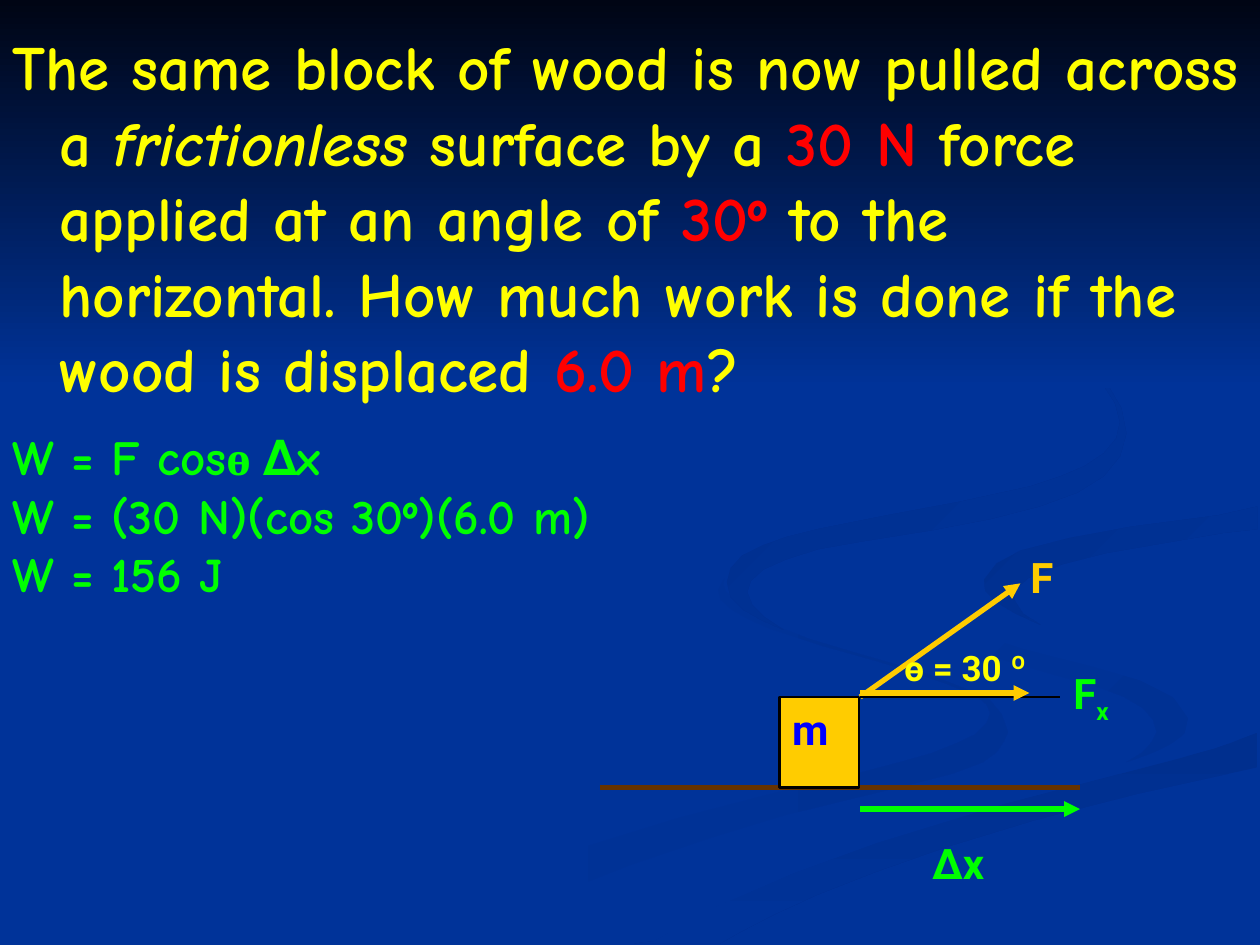
from dataclasses import dataclass

from lxml.etree import SubElement
from pptx import Presentation
from pptx.dml.color import RGBColor as RGB
from pptx.enum.shapes import MSO_CONNECTOR as Connector, MSO_SHAPE as Shape
from pptx.enum.text import MSO_ANCHOR as Anchor, PP_ALIGN as Align
from pptx.oxml.ns import qn
from pptx.util import Cm, Pt


@dataclass(frozen=True)
class Theme:
    back: str = "003399"
    night: str = "000514"
    shade: str = "002F8E"
    dim: str = "003193"
    yellow: str = "FFFF00"
    red: str = "FF0000"
    green: str = "00FF00"
    gold: str = "FFCC00"
    blue: str = "0000FF"
    brown: str = "663300"
    black: str = "000000"
    comic: str = "Comic Neue"
    sans: str = "Roboto"
    serif: str = "Times New Roman"
    question: int = 36
    work: int = 28
    label: int = 24
    angle: int = 20


T = Theme()
HUNDREDTH_INCH = Cm(2.54) / 100

LOWER_SWIRL = [
    (781, 553), (757, 543), (731, 533), (682, 519), (642, 507), (614, 496),
    (594, 485), (583, 477), (576, 469), (574, 464), (575, 459), (570, 468),
    (572, 476), (581, 484), (593, 491), (611, 499), (654, 513), (697, 525),
    (728, 535), (752, 543), (776, 553), (783, 559), (786, 566), (783, 574),
    (774, 583), (759, 590), (739, 598), (714, 605), (684, 613), (616, 629),
    (539, 649), (458, 674), (417, 690), (376, 707), (338, 727), (300, 749),
    (361, 749), (431, 714), (499, 687), (564, 665), (623, 647), (676, 634),
    (721, 623), (756, 614), (780, 605), (791, 597), (797, 588), (800, 581),
    (795, 567), (786, 556)]
RIGHT_SWIRL = [
    (943, 570), (939, 562), (930, 553), (905, 540), (870, 530), (830, 519),
    (792, 509), (758, 498), (733, 483), (727, 474), (724, 464), (725, 474),
    (733, 488), (746, 500), (766, 512), (797, 524), (838, 536), (868, 544),
    (892, 553), (907, 562), (915, 571), (918, 581), (914, 589), (907, 597),
    (894, 605), (916, 597), (932, 589), (941, 581)]
BOTTOM_BAND = [
    (519, 747), (503, 749), (571, 749), (587, 740), (614, 726), (649, 710),
    (695, 692), (752, 672), (821, 651), (903, 630), (998, 609), (998, 581),
    (976, 590), (936, 602), (867, 620), (797, 638), (764, 647), (696, 669),
    (630, 693), (569, 719), (543, 733)]
WIDE_BAND = [
    (725, 464), (731, 479), (745, 490), (775, 503), (812, 515), (871, 530),
    (905, 540), (931, 553), (943, 570), (940, 583), (926, 593), (902, 603),
    (869, 611), (812, 625), (743, 643), (663, 668), (573, 703), (477, 749),
    (519, 747), (570, 719), (630, 693), (696, 669), (797, 638), (904, 610),
    (964, 594), (999, 581), (999, 538), (941, 527), (866, 509), (817, 492),
    (794, 480), (782, 466), (786, 453), (800, 442), (835, 430), (899, 418),
    (968, 409), (999, 402), (999, 387), (942, 399), (874, 408), (808, 417),
    (770, 427), (742, 439), (730, 449)]
RIGHT_HOOK = [
    (781, 460), (782, 469), (791, 478), (806, 487), (826, 496), (812, 487),
    (805, 476), (806, 468), (816, 459), (843, 448), (878, 439), (936, 429),
    (971, 423), (998, 420), (998, 402), (967, 409), (898, 418), (849, 427),
    (810, 437), (791, 447)]
UPPER_SWIRL = [
    (683, 430), (739, 421), (786, 412), (825, 402), (855, 391), (876, 378),
    (889, 362), (894, 344), (890, 324), (880, 307), (864, 291), (843, 275),
    (810, 256), (780, 241), (762, 233), (805, 254), (846, 279), (862, 292),
    (876, 306), (885, 320), (889, 335), (886, 348), (876, 360), (861, 370),
    (842, 378), (818, 386), (763, 398), (704, 409), (649, 420), (625, 426),
    (605, 433), (589, 441), (580, 451), (577, 462), (580, 474), (590, 484),
    (604, 492), (622, 500), (607, 490), (597, 480), (593, 470), (596, 461),
    (606, 452), (624, 444), (649, 436)]
HEADER = [(0, 0), (0, 308), (1000, 308), (1000, 0)]


def color(code):
    return RGB.from_string(code)


def add_outline(s, points, start, end, angle):
    builder = s.shapes.build_freeform(*points[0], scale=HUNDREDTH_INCH)
    builder.add_line_segments(points[1:], close=True)
    sp = builder.convert_to_shape()
    sp.shadow.inherit = False
    sp.line.fill.background()
    sp.fill.gradient()
    sp.fill.gradient_angle = -angle % 360
    for stop, code in zip(sp.fill.gradient_stops, (start, end)):
        stop.color.rgb = color(code)


def write(tf, paragraphs, size, ink, font=T.sans, wrap=True, hanging=0):
    tf.word_wrap = wrap
    tf.vertical_anchor = Anchor.TOP
    for i, runs in enumerate(paragraphs):
        p = tf.paragraphs[0] if i == 0 else tf.add_paragraph()
        p.alignment = Align.LEFT
        if hanging:
            pPr = p._p.get_or_add_pPr()
            pPr.set("marL", str(Cm(hanging)))
            pPr.set("indent", str(-Cm(hanging)))
        for text, change in runs:
            r = p.add_run()
            r.text = text
            r.font.size = Pt(size)
            r.font.bold = True
            r.font.italic = change.get("italic", False)
            r.font.name = change.get("font", font)
            r.font.color.rgb = color(change.get("ink", ink))
            if "baseline" in change:
                r.font._element.set("baseline", str(change["baseline"]))


def add_text(s, box, paragraphs, **fmt):
    sp = s.shapes.add_textbox(*map(Cm, box))
    write(sp.text_frame, paragraphs, **fmt)


def add_line(s, start, end, ink, width=3, arrow=False):
    cx = s.shapes.add_connector(Connector.STRAIGHT, *map(Cm, start + end))
    cx.line.color.rgb = color(ink)
    cx.line.width = Pt(width)
    if arrow:
        SubElement(cx.line._get_or_add_ln(), qn("a:tailEnd"), type="triangle")
    SubElement(cx._element.spPr, qn("a:effectLst"))


def add_block(s, box, text):
    sp = s.shapes.add_shape(Shape.RECTANGLE, *map(Cm, box))
    sp.shadow.inherit = False
    sp.fill.solid()
    sp.fill.fore_color.rgb = color(T.gold)
    sp.line.color.rgb = color(T.black)
    sp.line.width = Pt(1.5)
    write(sp.text_frame, [[(text, {})]], size=T.label, ink=T.blue)


def add_backdrop(s):
    s.background.fill.solid()
    s.background.fill.fore_color.rgb = color(T.back)
    add_outline(s, LOWER_SWIRL, T.back, T.dim, 0)
    add_outline(s, RIGHT_SWIRL, T.back, T.dim, 45)
    add_outline(s, BOTTOM_BAND, T.shade, T.back, 90)
    add_outline(s, WIDE_BAND, T.back, T.back, 0)
    add_outline(s, RIGHT_HOOK, T.shade, T.back, 45)
    add_outline(s, UPPER_SWIRL, T.shade, T.back, 45)
    add_outline(s, HEADER, T.night, T.back, 90)


def add_problem(s):
    red = {"ink": T.red}
    question = [
        ("The same block of wood is now pulled across a ", {}),
        ("frictionless", {"italic": True}), (" surface by a ", {}),
        ("30 N", red), (" force applied at an angle of ", {}), ("30º", red),
        (" to the horizontal. How much work is done if the wood is displaced ", {}),
        ("6.0 m", red), ("?", {})]
    add_text(s, (0, 0.43, 25.4, 8.05), [question], size=T.question,
             ink=T.yellow, font=T.comic, hanging=0.95)
    work = [[("W = F cos", {}), ("ө ", {"font": T.serif}), ("∆x", {})],
            [("W = (30 N)(cos 30º)(6.0 m)", {})],
            [("W = 156 J", {})]]
    add_text(s, (0, 8.47, 14.61, 3.81), work, size=T.work, ink=T.green,
             font=T.comic)


def add_diagram(s):
    corner = (17.34, 14.05)
    add_line(s, (12.09, 15.88), (21.77, 15.88), T.brown)
    add_block(s, (15.72, 14.05, 1.6, 1.83), "m")
    add_line(s, (17.34, 16.31), (21.77, 16.31), T.green, arrow=True)
    add_line(s, corner, (20.57, 11.76), T.gold, arrow=True)
    add_line(s, corner, (21.36, 14.05), T.black, width=0.75)
    add_line(s, (17.34, 13.97), (20.75, 13.97), T.gold, arrow=True)
    subscript = ("x", {"baseline": -25000})
    labels = [
        ((18.54, 16.76, 2.5, 1.85), [("∆x", {})], T.label, T.green),
        ((20.52, 11, 1.02, 1.27), [("F", {})], T.label, T.gold),
        ((21.39, 13.34, 1.35, 1.27), [("F", {}), subscript], T.label, T.green),
        ((17.98, 12.9, 3.43, 1.09), [("ө = 30 º", {})], T.angle, T.yellow)]
    for box, runs, size, ink in labels:
        add_text(s, box, [runs], size=size, ink=ink, wrap=False)


def main():
    prs = Presentation()
    prs.slide_width, prs.slide_height = Cm(25.4), Cm(19.05)
    s = prs.slides.add_slide(prs.slide_layouts[6])
    add_backdrop(s)
    add_problem(s)
    add_diagram(s)
    prs.save("out.pptx")


if __name__ == "__main__":
    main()
